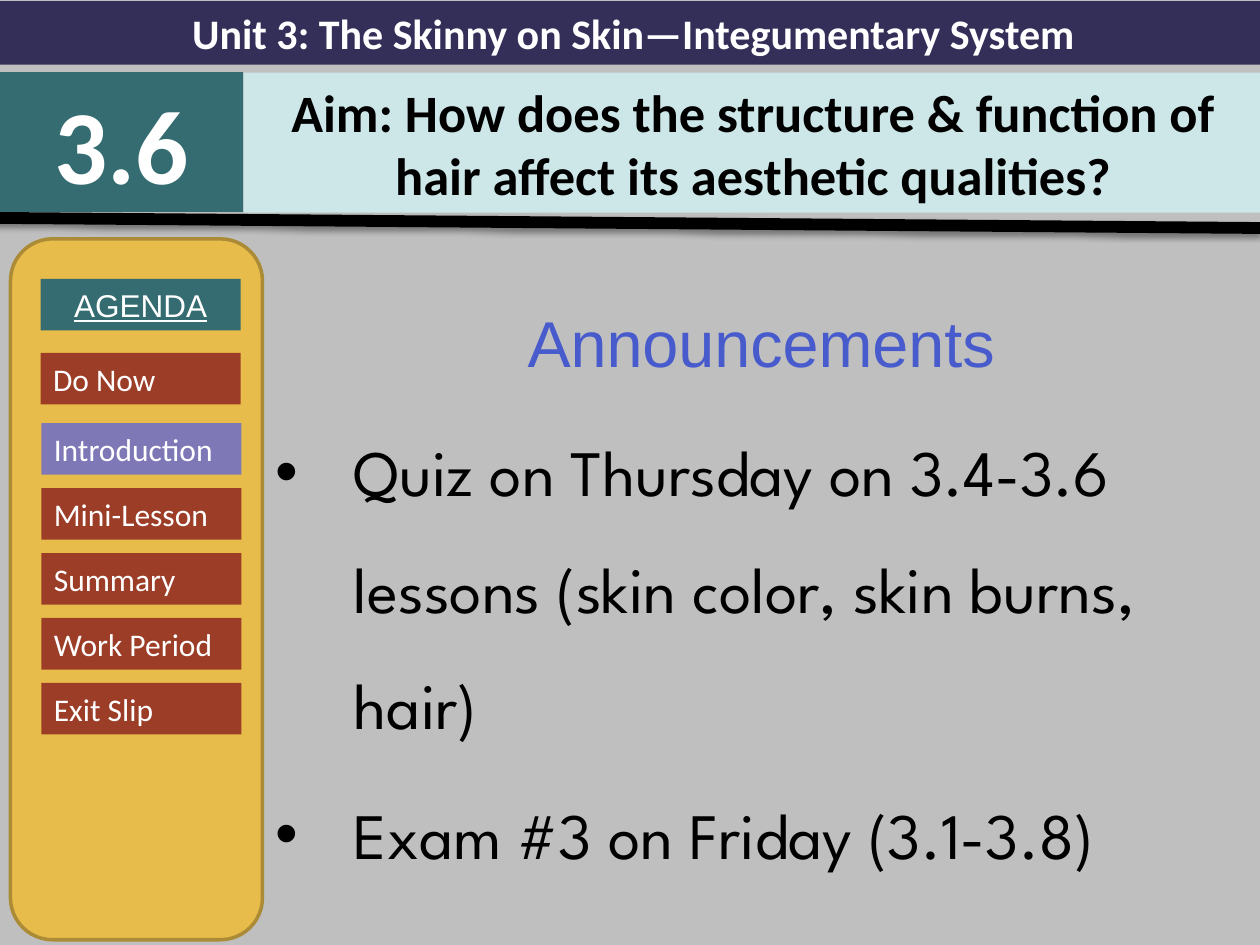
"""Build the announcements slide of the lesson on hair."""
from lxml.etree import SubElement
from pptx import Presentation
from pptx.dml.color import RGBColor
from pptx.enum.shapes import MSO_CONNECTOR as Connector, MSO_SHAPE as Shape
from pptx.enum.text import MSO_ANCHOR as Anchor, MSO_AUTO_SIZE as AutoSize, PP_ALIGN as Align
from pptx.oxml import parse_xml
from pptx.oxml.ns import nsdecls, qn
from pptx.util import Pt

COLORS = {
    "background": "BFBFBF", "navy": "342F59", "teal": "346C71", "pale": "CDE6E8",
    "gold": "E8BC4A", "gold_edge": "AC8B37", "brick": "9C3D28", "violet": "7E78B7",
    "blue": "475BCD", "white": "FFFFFF", "black": "000000",
}


def color(name):
    return RGBColor.from_string(COLORS[name])


def write(box, text, place=None, fill=None, size=18, font="Calibri", ink="white",
          bold=False, underline=False, align=Align.CENTER, anchor=Anchor.MIDDLE):
    if place:
        box.left, box.top, box.width, box.height = map(Pt, place)
    if fill:
        box.fill.solid()
        box.fill.fore_color.rgb = color(fill)
    frame = box.text_frame
    frame.word_wrap = True
    frame.auto_size = AutoSize.NONE
    frame.vertical_anchor = anchor
    para = frame.add_paragraph() if frame.text else frame.paragraphs[0]
    para.alignment = align
    span = para.add_run()
    span.text = text
    span.font.name = font
    span.font.size = Pt(size)
    span.font.bold = bold
    span.font.underline = underline
    span.font.color.rgb = color(ink)
    return para


deck = Presentation()
deck.slide_width, deck.slide_height = Pt(720), Pt(540)
page = deck.slides.add_slide(deck.slide_layouts[0])
page.background.fill.solid()
page.background.fill.fore_color.rgb = color("background")
aim, body = page.placeholders

write(aim, "Aim: How does the structure & function of hair affect its aesthetic qualities?",
      place=(139, 41.5, 583, 80), fill="pale", size=30, ink="black", bold=True)

write(body, "Announcements", place=(150, 147, 570, 393), size=37, font="Arial",
      ink="blue", anchor=Anchor.TOP)
for notice in ("Quiz on Thursday on 3.4-3.6 lessons (skin color, skin burns, hair)",
               "Exam #3 on Friday (3.1-3.8)"):
    para = write(body, notice, size=37, font="League Spartan", ink="black",
                 align=Align.LEFT, anchor=Anchor.TOP)
    layout = para._p.get_or_add_pPr()
    layout.set("marL", str(Pt(45)))
    layout.set("indent", str(Pt(-45)))
    SubElement(layout, qn("a:buFont")).set("typeface", "Arial")
    SubElement(layout, qn("a:buChar")).set("char", "•")
for para in body.text_frame.paragraphs:
    para.line_spacing = 1.5
    para.space_before = Pt(7.4)

rule = page.shapes.add_connector(Connector.STRAIGHT, Pt(-3.6), Pt(124.5), Pt(720), Pt(130.3))
rule.line.color.rgb = color("black")
rule.line.width = Pt(6.75)
rule._element.spPr.append(parse_xml(
    f'<a:effectLst {nsdecls("a")}>'
    f'<a:outerShdw blurRad="{Pt(3.1)}" dist="{Pt(1.6)}" dir="5400000" rotWithShape="0">'
    f'<a:srgbClr val="{COLORS["black"]}"><a:alpha val="38000"/></a:srgbClr>'
    '</a:outerShdw></a:effectLst>'))

panel = page.shapes.add_shape(Shape.ROUNDED_RECTANGLE, Pt(6), Pt(136.5), Pt(144), Pt(400.5))
panel.shadow.inherit = False
panel.fill.solid()
panel.fill.fore_color.rgb = color("gold")
panel.line.color.rgb = color("gold_edge")
panel.line.width = Pt(2)

heading = {"bold": True}
label = {"align": Align.LEFT}
bars = [
    ("Unit 3: The Skinny on Skin—Integumentary System", (0, 0.7, 724, 36.3), "navy",
     {"size": 24, **heading}),
    ("3.6", (0, 41.2, 139, 80), "teal", {"size": 60, **heading}),
    ("AGENDA", (23.3, 159.3, 114.3, 29.5), "teal", {"font": "Arial", "underline": True}),
    ("Do Now", (23.3, 201.6, 114.3, 29.5), "brick", label),
]
steps = ("Introduction", "Mini-Lesson", "Summary", "Work Period", "Exit Slip")
for index, step in enumerate(steps):
    fill = "violet" if step == "Introduction" else "brick"
    bars.append((step, (23.7, 241.8 + 37.1 * index, 114.3, 29.5), fill, label))

for text, place, fill, style in bars:
    bar = page.shapes.add_shape(Shape.RECTANGLE, *map(Pt, place))
    bar.shadow.inherit = False
    bar.line.fill.background()
    write(bar, text, fill=fill, **style)

deck.save("out.pptx")
